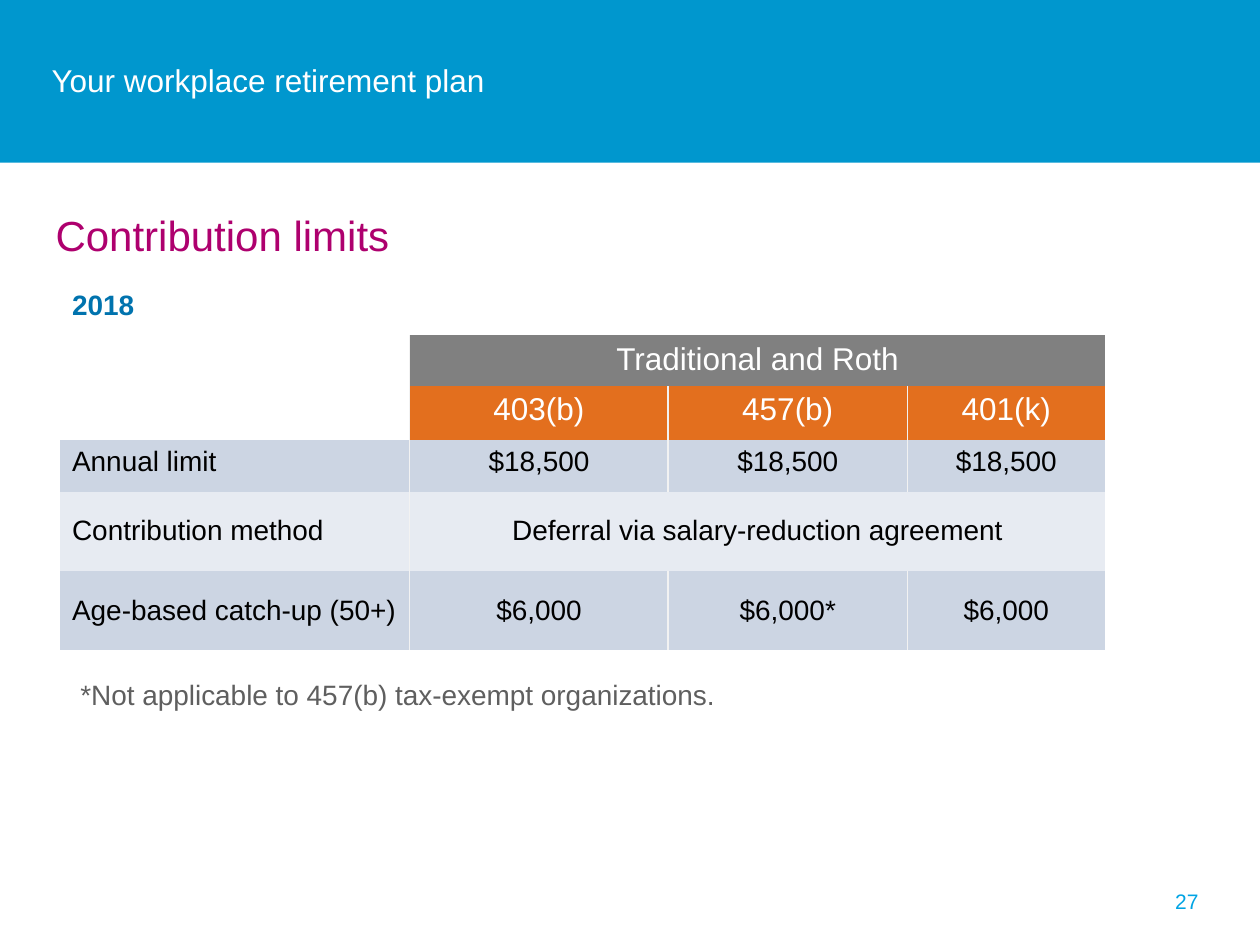
from lxml.etree import SubElement
from pptx import Presentation
from pptx.dml.color import RGBColor
from pptx.enum.shapes import MSO_SHAPE
from pptx.enum.text import MSO_ANCHOR as ANCHOR, PP_ALIGN as ALIGN
from pptx.oxml.ns import qn
from pptx.util import Cm, Pt

COLORS = {
    "banner": "0097CE", "white": "FFFFFF", "heading": "AE006E",
    "year": "0073AE", "group": "808080", "plan": "E36F1E",
    "band_dark": "CCD5E3", "band_light": "E7EBF2", "text": "000000",
    "rule": "F2F2F2", "note": "5F5F5F", "number": "00A4E4",
}
COLUMN_WIDTHS = [7.06, 5.21, 4.82, 3.99]
# height, fill, text colour, size, anchor, texts (None continues the cell to its left)
ROWS = [
    (1.04, None, "year", 16, ANCHOR.TOP, ["2018", None, None, None]),
    (1.02, "group", "white", 18, ANCHOR.TOP, ["", "Traditional and Roth", None, None]),
    (1.09, "plan", "white", 18, ANCHOR.TOP, ["", "403(b)", "457(b)", "401(k)"]),
    (1.04, "band_dark", "text", 16, ANCHOR.TOP,
     ["Annual limit", "$18,500", "$18,500", "$18,500"]),
    (1.6, "band_light", "text", 16, ANCHOR.MIDDLE,
     ["Contribution method", "Deferral via salary-reduction agreement", None, None]),
    (1.6, "band_dark", "text", 16, ANCHOR.MIDDLE,
     ["Age-based catch-up (50+)", "$6,000", "$6,000*", "$6,000"]),
]


def rgb(name):
    return RGBColor.from_string(COLORS[name])


def style_text(text_frame, text, size, color, align=ALIGN.LEFT, bold=False):
    text_frame.text = text
    paragraph = text_frame.paragraphs[0]
    paragraph.alignment = align
    font = paragraph.font
    for run in paragraph.runs:
        font = run.font
    font.name, font.size, font.bold = "Arial", Pt(size), bold
    font.color.rgb = rgb(color)


def add_text(slide, box, text, size, color, align=ALIGN.LEFT, anchor=ANCHOR.TOP, inset=0.25):
    text_frame = slide.shapes.add_textbox(*map(Cm, box)).text_frame
    text_frame.word_wrap = True
    text_frame.margin_left = Cm(inset)
    text_frame.vertical_anchor = anchor
    style_text(text_frame, text, size, color, align)


def add_banner(slide, left, top, width, height):
    banner = slide.shapes.add_shape(
        MSO_SHAPE.RECTANGLE, Cm(left), Cm(top), Cm(width), Cm(height))
    banner.shadow.inherit = False
    banner.fill.solid()
    banner.fill.fore_color.rgb = rgb("banner")
    banner.line.fill.background()
    add_text(slide, (left + 1.04, top + 0.99, width - 2, 1.24),
             "Your workplace retirement plan", 18, "white", anchor=ANCHOR.MIDDLE, inset=0)


def set_borders(cell, ruled_sides):
    """Draw a thin rule on the given sides (L, R, T, B) and clear the others."""
    properties = cell._tc.get_or_add_tcPr()
    for side in "LRTB":
        line = SubElement(properties, qn(f"a:ln{side}"), w=str(Pt(1)))
        if side in ruled_sides:
            fill = SubElement(line, qn("a:solidFill"))
            SubElement(fill, qn("a:srgbClr"), val=COLORS["rule"])
        else:
            SubElement(line, qn("a:noFill"))


def fill_row(table, row_index, fill, color, size, anchor, texts):
    last = len(texts) - 1
    for column, text in enumerate(texts):
        cell = table.cell(row_index, column)
        sides = ""
        if column > 0 and text is not None:
            sides += "L"
        if column < last and texts[column + 1] is not None:
            sides += "R"
        set_borders(cell, sides)
        if fill and text != "":
            cell.fill.solid()
            cell.fill.fore_color.rgb = rgb(fill)
        else:
            cell.fill.background()
        cell.vertical_anchor = anchor
        if text is not None:
            style_text(cell.text_frame, text, size, color,
                       ALIGN.CENTER if column else ALIGN.LEFT, bold=color == "year")
            end = column
            while end < last and texts[end + 1] is None:
                end += 1
            if end > column:
                cell.merge(table.cell(row_index, end))


def add_limits_table(slide, left, top):
    heights = [row[0] for row in ROWS]
    table = slide.shapes.add_table(
        len(ROWS), len(COLUMN_WIDTHS), Cm(left), Cm(top),
        Cm(sum(COLUMN_WIDTHS)), Cm(sum(heights))).table
    table.first_row = table.horz_banding = False
    for column, width in zip(table.columns, COLUMN_WIDTHS):
        column.width = Cm(width)
    for index, (height, *content) in enumerate(ROWS):
        table.rows[index].height = Cm(height)
        fill_row(table, index, *content)


def add_body(slide, left, top, width):
    add_text(slide, (left, top, width, 1.32), "Contribution limits", 24, "heading", inset=0)
    add_limits_table(slide, left + 0.08, top + 1.63)
    add_text(slide, (left + 0.25, top + 9.45, 21, 0.94),
             "*Not applicable to 457(b) tax-exempt organizations.", 16, "note")


def main():
    presentation = Presentation()
    presentation.slide_width, presentation.slide_height = Cm(25.4), Cm(19.05)
    slide = presentation.slides.add_slide(presentation.slide_layouts[6])
    add_banner(slide, 0, 0, 25.4, 3.28)
    add_body(slide, 1.12, 4.09, 22.35)
    add_text(slide, (18.49, 17.65, 5.92, 1.02), "27", 12, "number",
             ALIGN.RIGHT, ANCHOR.MIDDLE)
    presentation.save("out.pptx")


if __name__ == "__main__":
    main()
